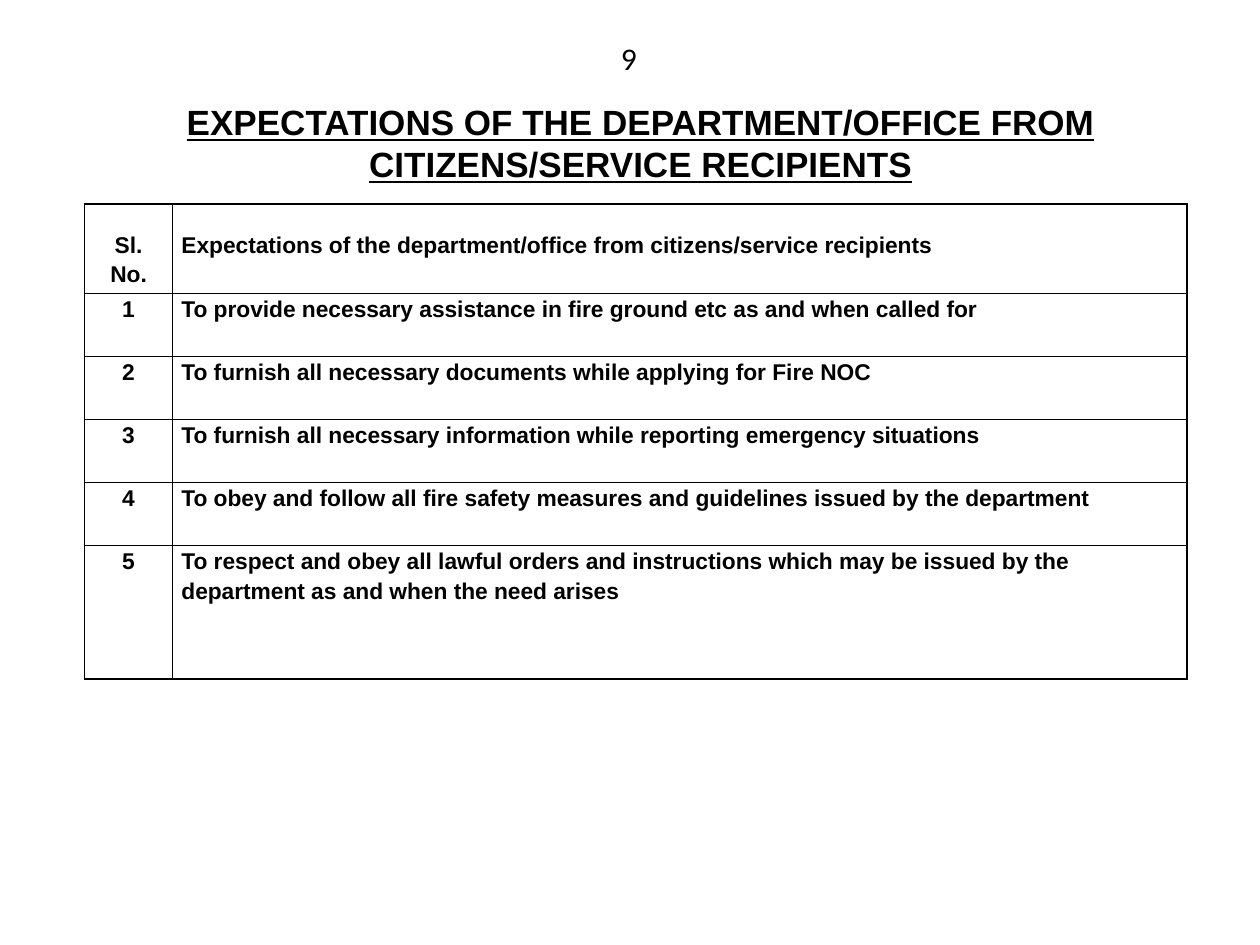
import dataclasses
import typing

import lxml.etree
import pptx
import pptx.dml.color
import pptx.enum.text
import pptx.oxml.ns
import pptx.util

Inches = pptx.util.Inches
Align = pptx.enum.text.PP_ALIGN


@dataclasses.dataclass(frozen=True)
class Theme:
    ink: str = "000000"
    heading_font: str = "Arial"
    number_font: str = "Calibri"
    title_size: int = 20
    table_size: int = 13
    number_size: int = 18
    table_spacing: float = 1.15
    border_width: int = 1


@dataclasses.dataclass(frozen=True)
class TextBox:
    text: str
    left: float
    top: float
    width: float
    height: float
    alignment: Align
    wrap: bool
    font: dict[str, typing.Any]


THEME = Theme()
TABLE_FONT = {
    "name": THEME.heading_font,
    "size": pptx.util.Pt(THEME.table_size),
    "bold": True,
}
TITLE = TextBox(
    "EXPECTATIONS OF THE DEPARTMENT/OFFICE FROM CITIZENS/SERVICE RECIPIENTS",
    0.92, 0.75, 8.33, 0.77, Align.CENTER, True,
    {
        "name": THEME.heading_font,
        "size": pptx.util.Pt(THEME.title_size),
        "bold": True,
        "underline": True,
    },
)
PAGE_NUMBER = TextBox(
    "9", 4.83, 0.26, 0.33, 0.4, Align.LEFT, False,
    {"name": THEME.number_font, "size": pptx.util.Pt(THEME.number_size)},
)
HEADER = ("Sl.\nNo.", "Expectations of the department/office from citizens/service recipients")
EXPECTATIONS = (
    "To provide necessary assistance in fire ground etc as and when called for",
    "To furnish all necessary documents while applying for Fire NOC",
    "To furnish all necessary information while reporting emergency situations",
    "To obey and follow all fire safety measures and guidelines issued by the department",
    "To respect and obey all lawful orders and instructions which may be issued by the "
    "department as and when the need arises",
)
COLUMN_WIDTHS = (0.7, 8.05)
ROW_HEIGHTS = (0.71, 0.5, 0.5, 0.5, 0.5, 1.06)
COLUMN_ALIGNMENTS = (Align.CENTER, Align.LEFT)
HEADER_TOP_MARGIN = 0.2


def set_attributes(target: typing.Any, values: dict[str, typing.Any]) -> None:
    for name, value in values.items():
        setattr(target, name, value)


def format_text(frame, font: dict[str, typing.Any], paragraph_format: dict[str, typing.Any]) -> None:
    for paragraph in frame.paragraphs:
        set_attributes(paragraph, paragraph_format)
        for run in paragraph.runs:
            set_attributes(run.font, font)
            run.font.color.rgb = pptx.dml.color.RGBColor.from_string(THEME.ink)


def draw_text(slide, box: TextBox) -> None:
    shape = slide.shapes.add_textbox(*map(Inches, (box.left, box.top, box.width, box.height)))
    shape.text_frame.text = box.text
    shape.text_frame.word_wrap = box.wrap
    format_text(shape.text_frame, box.font, {"alignment": box.alignment})


def draw_borders(cell) -> None:
    qualified = pptx.oxml.ns.qn
    properties = cell._tc.get_or_add_tcPr()
    for position, side in enumerate(("lnL", "lnR", "lnT", "lnB")):
        line = lxml.etree.Element(
            qualified(f"a:{side}"), w=str(pptx.util.Pt(THEME.border_width))
        )
        fill = lxml.etree.SubElement(line, qualified("a:solidFill"))
        lxml.etree.SubElement(fill, qualified("a:srgbClr"), val=THEME.ink)
        properties.insert(position, line)


def fill_cell(cell, text: str, alignment: Align, top_margin: float) -> None:
    cell.text = text
    set_attributes(cell, {
        "margin_left": Inches(0.07),
        "margin_right": Inches(0.07),
        "margin_top": Inches(top_margin),
        "margin_bottom": Inches(0),
    })
    cell.fill.background()
    format_text(
        cell.text_frame, TABLE_FONT,
        {"alignment": alignment, "line_spacing": THEME.table_spacing},
    )
    draw_borders(cell)


def draw_expectations(slide) -> None:
    rows = [HEADER, *((str(number), text) for number, text in enumerate(EXPECTATIONS, 1))]
    table = slide.shapes.add_table(
        len(rows), len(COLUMN_WIDTHS), Inches(0.67), Inches(1.62),
        Inches(sum(COLUMN_WIDTHS)), Inches(sum(ROW_HEIGHTS)),
    ).table
    set_attributes(table, {"first_row": False, "horz_banding": False})
    for column, width in zip(table.columns, COLUMN_WIDTHS):
        column.width = Inches(width)
    for row_index, (row, height, texts) in enumerate(zip(table.rows, ROW_HEIGHTS, rows)):
        row.height = Inches(height)
        top_margin = HEADER_TOP_MARGIN if row_index == 0 else 0
        for cell, text, alignment in zip(row.cells, texts, COLUMN_ALIGNMENTS):
            fill_cell(cell, text, alignment, top_margin)


def main() -> None:
    presentation = pptx.Presentation()
    set_attributes(presentation, {"slide_width": Inches(10), "slide_height": Inches(7.5)})
    slide = presentation.slides.add_slide(presentation.slide_layouts[6])
    draw_text(slide, TITLE)
    draw_expectations(slide)
    draw_text(slide, PAGE_NUMBER)
    presentation.save("out.pptx")


if __name__ == "__main__":
    main()
